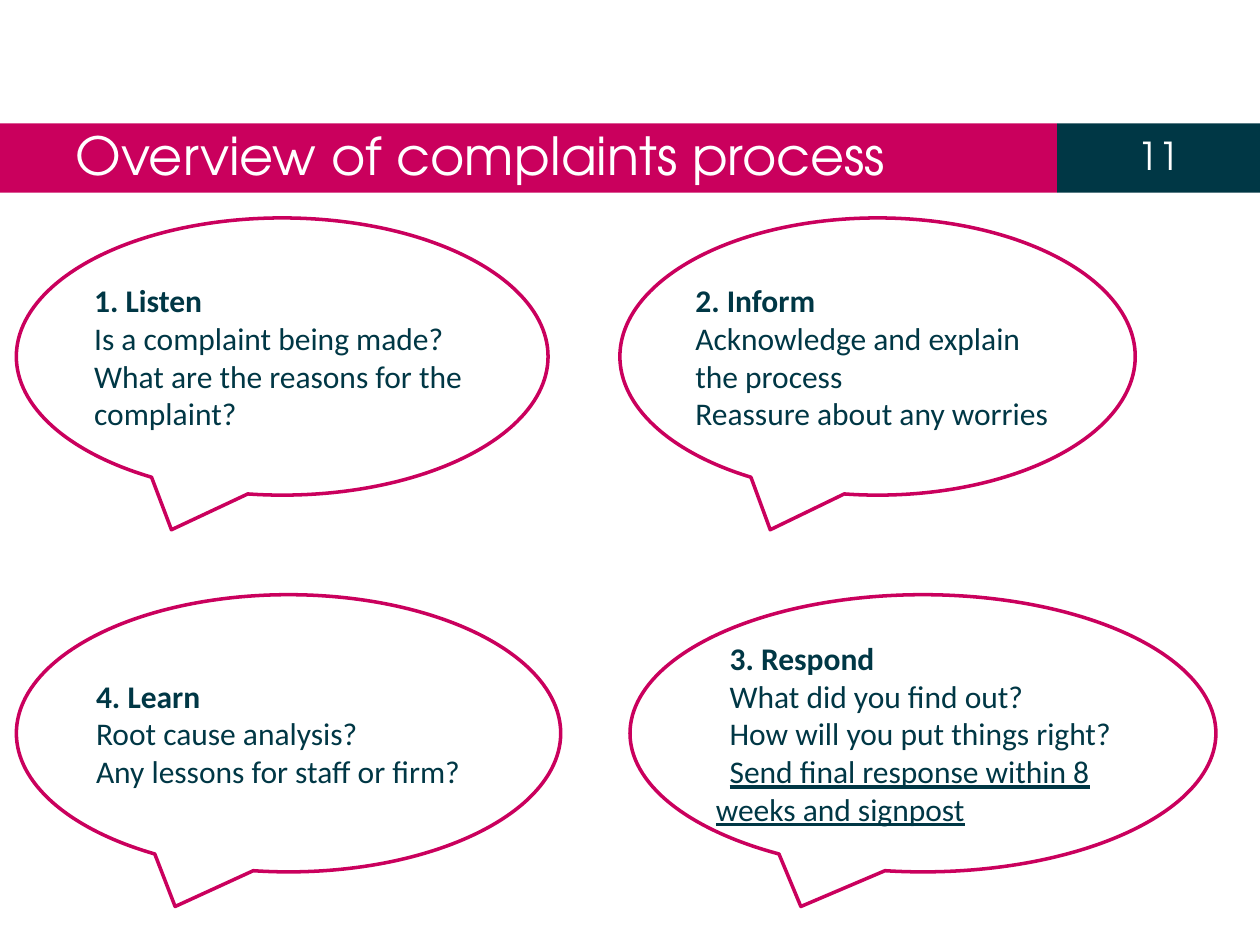
from pptx import Presentation
from pptx.dml.color import RGBColor
from pptx.enum import shapes, text
from pptx.util import Inches, Pt

PINK = RGBColor(0xCA, 0x00, 0x5D)
TEAL = RGBColor(0x00, 0x37, 0x45)
WHITE = RGBColor(0xFF, 0xFF, 0xFF)
HEADING_FONT, BODY_FONT = "TeX Gyre Adventor", "Calibri"

TITLE = "Overview of complaints process"
PAGE = "11"
BANDS = [(0, 8.39, PINK), (8.39, 1.61, TEAL)]
TOP_ROW, BOTTOM_ROW, BUBBLE_HEIGHT = 1.73, 4.72, 2.2
STEPS = [
    dict(left=5, top=BOTTOM_ROW, width=4.65, indent=0.11, underline_last=True,
         lines=["3. Respond", "What did you find out?",
                "How will you put things right?",
                "Send final response within 8 weeks and signpost"]),
    dict(left=0.13, top=TOP_ROW, width=4.22,
         lines=["1. Listen", "Is a complaint being made?",
                "What are the reasons for the complaint?"]),
    dict(left=4.92, top=TOP_ROW, width=4.09,
         lines=["2. Inform", "Acknowledge and explain the process",
                "Reassure about any worries"]),
    dict(left=0.13, top=BOTTOM_ROW, width=4.32,
         lines=["4. Learn", "Root cause analysis?",
                "Any lessons for staff or firm?"]),
]


def write(paragraph, words, size, font, color, align=text.PP_ALIGN.LEFT,
          bold=False, underline=False, indent=0):
    paragraph.alignment = align
    if indent:
        paragraph._p.get_or_add_pPr().set("indent", str(Inches(indent)))
    run = paragraph.add_run()
    run.text = words
    run.font.size = Pt(size)
    run.font.name = font
    run.font.color.rgb = color
    run.font.bold = bold
    run.font.underline = underline


def add_band(slide, position, left, width, color):
    band = slide.shapes.add_shape(shapes.MSO_SHAPE.RECTANGLE, Inches(left),
                                  Inches(0.98), Inches(width), Inches(0.55))
    band.shadow.inherit = False
    band.fill.solid()
    band.fill.fore_color.rgb = color
    band.line.fill.background()
    slide.shapes._spTree.insert(2 + position, band._element)


def add_bubble(slide, left, top, width, lines, indent=0, underline_last=False):
    bubble = slide.shapes.add_shape(shapes.MSO_SHAPE.OVAL_CALLOUT, Inches(left),
                                    Inches(top), Inches(width), Inches(BUBBLE_HEIGHT))
    bubble.shadow.inherit = False
    bubble.fill.background()
    bubble.line.color.rgb = PINK
    bubble.line.width = Pt(2)
    frame = bubble.text_frame
    frame.word_wrap = True
    frame.vertical_anchor = text.MSO_ANCHOR.MIDDLE
    frame.margin_left = frame.margin_right = frame.margin_top = frame.margin_bottom = 0
    last = len(lines) - 1
    for number, line in enumerate(lines):
        paragraph = frame.add_paragraph() if number else frame.paragraphs[0]
        write(paragraph, line, 18, BODY_FONT, TEAL, bold=number == 0,
              underline=underline_last and number == last, indent=indent)


def main():
    deck = Presentation()
    deck.slide_width, deck.slide_height = Inches(10), Inches(7.5)
    slide = deck.slides.add_slide(deck.slide_layouts[5])

    for position, band in enumerate(BANDS):
        add_band(slide, position, *band)

    title = slide.shapes.title
    title.left, title.top = Inches(0.5), Inches(0.99)
    title.width, title.height = Inches(7.65), Inches(0.47)
    write(title.text_frame.paragraphs[0], TITLE, 30, HEADING_FONT, WHITE)

    page = slide.shapes.add_textbox(Inches(8.39), Inches(0.99), Inches(1.61), Inches(0.48))
    write(page.text_frame.paragraphs[0], PAGE, 22, HEADING_FONT, WHITE,
          align=text.PP_ALIGN.CENTER)

    for heading in (title, page):
        heading.text_frame.word_wrap = True
        heading.text_frame.auto_size = text.MSO_AUTO_SIZE.NONE
        heading.text_frame.vertical_anchor = text.MSO_ANCHOR.MIDDLE

    for step in STEPS:
        add_bubble(slide, **step)

    deck.save("out.pptx")


if __name__ == "__main__":
    main()
